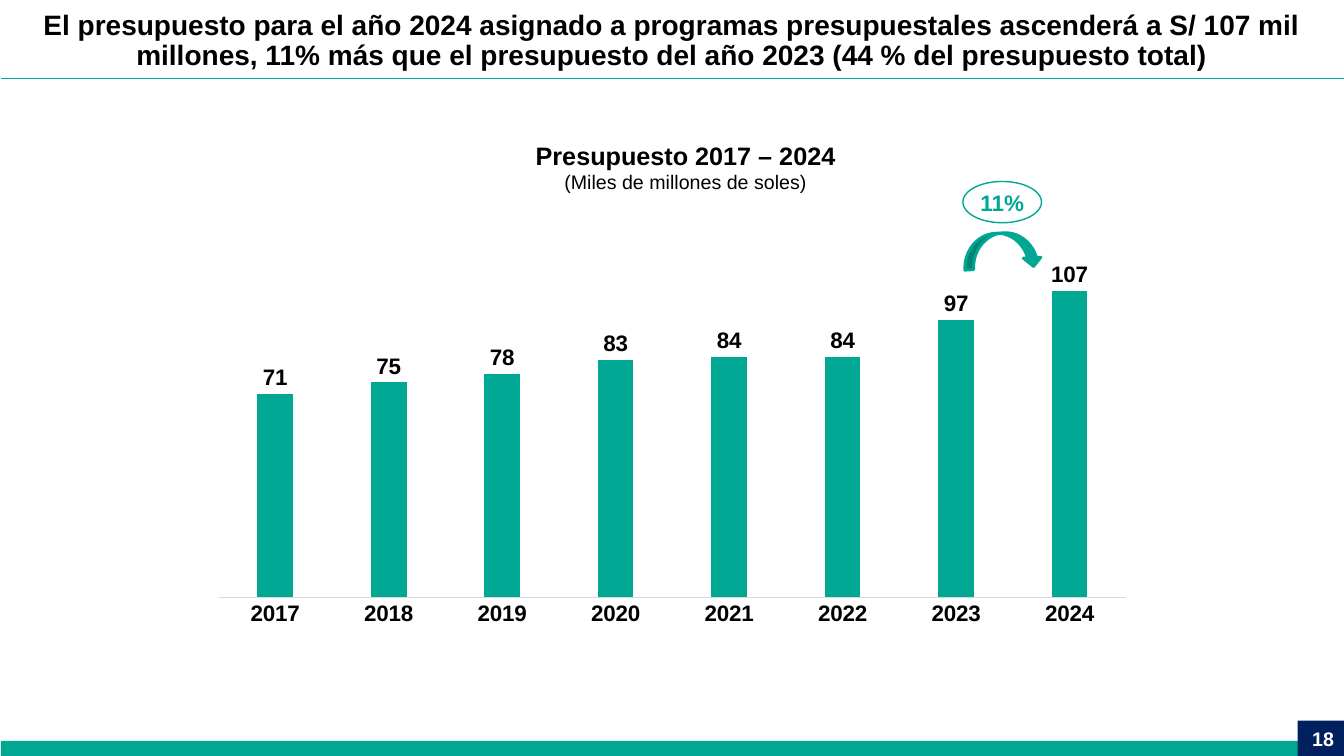
from dataclasses import dataclass
from typing import Optional

from lxml import etree
from pptx import Presentation
from pptx.chart.data import CategoryChartData
from pptx.dml.color import RGBColor
from pptx.enum import chart as charts, shapes, text
from pptx.oxml.ns import qn
from pptx.util import Inches, Pt


@dataclass(frozen=True)
class Theme:
    font: str = "Arial"
    ink: str = "000000"
    teal: str = "00A792"
    navy: str = "002060"
    white: str = "FFFFFF"
    rule: str = "D9D9D9"
    title: int = 20
    heading: int = 18
    label: int = 16
    small: int = 14


@dataclass(frozen=True)
class Box:
    left: float
    top: float
    width: float
    height: float

    def lengths(self) -> tuple:
        return tuple(map(Inches, (self.left, self.top, self.width, self.height)))


@dataclass(frozen=True)
class Figure:
    kind: shapes.MSO_SHAPE
    box: Box
    fill: Optional[str] = None
    line: Optional[str] = None
    line_width: float = 0
    rotation: float = 0


THEME = Theme()
BUDGET = {"2017": 71, "2018": 75, "2019": 78, "2020": 83,
          "2021": 84, "2022": 84, "2023": 97, "2024": 107}
FOOTER_BAND = Figure(shapes.MSO_SHAPE.RECTANGLE, Box(0.01, 7.35, 13.32, 0.15), THEME.teal)
NUMBER_TILE = Figure(shapes.MSO_SHAPE.RECTANGLE, Box(12.87, 7.15, 0.47, 0.35), THEME.navy)
GROWTH_ARROW = Figure(shapes.MSO_SHAPE.CURVED_DOWN_ARROW, Box(9.56, 2.31, 0.77, 0.35),
                      THEME.teal, THEME.teal, 2, 356.9)
GROWTH_OVAL = Figure(shapes.MSO_SHAPE.OVAL, Box(9.55, 1.8, 0.78, 0.41),
                     line=THEME.teal, line_width=1)


def color(value: str) -> RGBColor:
    return RGBColor.from_string(value)


def format_font(font, size: int, ink: str = THEME.ink, bold: bool = True) -> None:
    font.name = THEME.font
    font.size = Pt(size)
    font.bold = bold
    font.color.rgb = color(ink)


def write(paragraph, content: str, *, size: int, ink: str = THEME.ink, bold: bool = True,
          align=text.PP_ALIGN.CENTER, spacing: Optional[float] = None) -> None:
    paragraph.alignment = align
    if spacing:
        paragraph.line_spacing = spacing
    run = paragraph.add_run()
    run.text = content
    format_font(run.font, size, ink, bold)


def prepare_frame(shape, *, wrap: bool = True, side: float = 0.1,
                  anchor=text.MSO_ANCHOR.MIDDLE):
    frame = shape.text_frame
    frame.word_wrap = wrap
    frame.auto_size = text.MSO_AUTO_SIZE.NONE
    frame.vertical_anchor = anchor
    frame.margin_left = frame.margin_right = Inches(side)
    frame.margin_top = frame.margin_bottom = Inches(0.05)
    return frame


def add_figure(slide, figure: Figure):
    shape = slide.shapes.add_shape(figure.kind, *figure.box.lengths())
    shape.shadow.inherit = False
    shape.rotation = figure.rotation
    if figure.fill:
        shape.fill.solid()
        shape.fill.fore_color.rgb = color(figure.fill)
    else:
        shape.fill.background()
    if figure.line:
        shape.line.color.rgb = color(figure.line)
        shape.line.width = Pt(figure.line_width)
    else:
        shape.line.fill.background()
    return shape


def add_header_rule(slide) -> None:
    rule = slide.shapes.add_connector(shapes.MSO_CONNECTOR.STRAIGHT, Inches(0.01),
                                      Inches(0.78), Inches(13.33), Inches(0.78))
    rule.line.color.rgb = color(THEME.teal)
    rule.line.width = Pt(0.75)
    etree.SubElement(rule._element.spPr, qn("a:effectLst"))


def add_title(slide, content: str) -> None:
    title = slide.shapes.title
    title.left, title.top, title.width, title.height = Box(0, 0.06, 13.33, 0.71).lengths()
    write(prepare_frame(title).paragraphs[0], content, size=THEME.title, spacing=0.9)


def fix_plot_area(chart, **fractions: float) -> None:
    """Pin the inner plot area to fractions (x, y, w, h) of the chart frame."""
    plot_area = chart._chartSpace.chart.plotArea
    layout = plot_area.find(qn("c:layout"))
    if layout is None:
        layout = etree.Element(qn("c:layout"))
        plot_area.insert(0, layout)
    manual = etree.SubElement(layout, qn("c:manualLayout"))
    settings = {"layoutTarget": "inner", "xMode": "edge", "yMode": "edge", **fractions}
    for name, value in settings.items():
        etree.SubElement(manual, qn(f"c:{name}")).set("val", str(value))


def add_budget_chart(slide) -> None:
    data = CategoryChartData(number_format="0")
    data.categories = list(BUDGET)
    data.add_series("Presupuesto", list(BUDGET.values()))
    chart = slide.shapes.add_chart(charts.XL_CHART_TYPE.COLUMN_CLUSTERED,
                                   *Box(1.98, 2.44, 9.38, 3.83).lengths(), data).chart
    chart.has_legend = chart.has_title = False
    format_font(chart.font, THEME.label)
    fix_plot_area(chart, x=0.02, y=0.02, w=0.96, h=0.89)

    values = chart.value_axis
    values.minimum_scale, values.maximum_scale = 0, 120
    values.has_major_gridlines = False
    values.visible = False
    years = chart.category_axis
    years.major_tick_mark = charts.XL_TICK_MARK.NONE
    years.format.line.color.rgb = color(THEME.rule)
    years.format.line.width = Pt(0.75)
    format_font(years.tick_labels.font, THEME.label)

    plot = chart.plots[0]
    plot.gap_width, plot.overlap = 219, -27
    plot.vary_by_categories = False
    bars = plot.series[0].format.fill
    bars.solid()
    bars.fore_color.rgb = color(THEME.teal)
    plot.has_data_labels = True
    labels = plot.data_labels
    labels.show_value = True
    labels.position = charts.XL_LABEL_POSITION.OUTSIDE_END
    labels.number_format, labels.number_format_is_linked = "0", False
    format_font(labels.font, THEME.label)


def add_chart_heading(slide) -> None:
    heading = slide.shapes.add_textbox(*Box(3.08, 1.34, 7.44, 0.64).lengths())
    frame = prepare_frame(heading, anchor=text.MSO_ANCHOR.TOP)
    write(frame.paragraphs[0], "Presupuesto 2017 – 2024", size=THEME.heading)
    write(frame.add_paragraph(), "(Miles de millones de soles)", size=THEME.small, bold=False)


def add_growth_mark(slide) -> None:
    add_figure(slide, GROWTH_ARROW)
    frame = prepare_frame(add_figure(slide, GROWTH_OVAL), wrap=False, side=0.04)
    write(frame.paragraphs[0], "11%", size=THEME.label, ink=THEME.teal)


def add_slide_number(slide) -> None:
    number = slide.shapes.add_textbox(*Box(10.33, 7.13, 3, 0.4).lengths())
    write(prepare_frame(number).paragraphs[0], "18", size=THEME.small, ink=THEME.white,
          align=text.PP_ALIGN.RIGHT)


def main() -> None:
    presentation = Presentation()
    presentation.slide_width, presentation.slide_height = Inches(13.33), Inches(7.5)
    slide = presentation.slides.add_slide(presentation.slide_layouts.get_by_name("Title Only"))
    add_header_rule(slide)
    add_figure(slide, FOOTER_BAND)
    add_figure(slide, NUMBER_TILE)
    add_budget_chart(slide)
    add_title(slide, "El presupuesto para el año 2024 asignado a programas presupuestales "
                     "ascenderá a S/ 107 mil millones, 11% más que el presupuesto del año "
                     "2023 (44 % del presupuesto total)")
    add_chart_heading(slide)
    add_growth_mark(slide)
    add_slide_number(slide)
    presentation.save("out.pptx")


if __name__ == "__main__":
    main()
